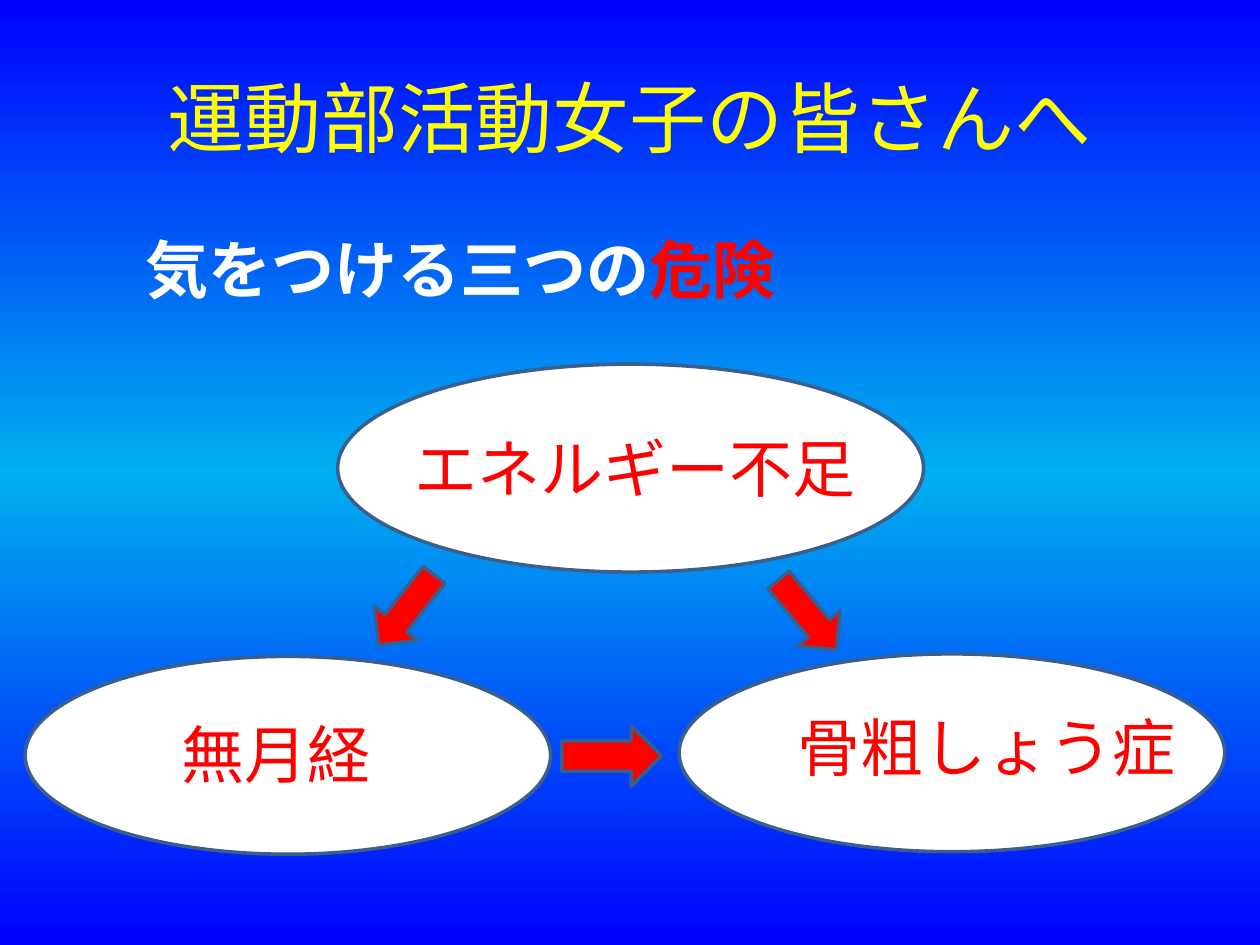
from copy import deepcopy
from dataclasses import dataclass

from pptx import Presentation
from pptx.dml.color import RGBColor
from pptx.enum.shapes import MSO_SHAPE
from pptx.enum.text import MSO_ANCHOR, MSO_AUTO_SIZE, PP_ALIGN
from pptx.oxml.ns import qn
from pptx.util import Inches, Pt

OVAL = MSO_SHAPE.OVAL
RIGHT_ARROW = MSO_SHAPE.RIGHT_ARROW
DOWN_ARROW = MSO_SHAPE.DOWN_ARROW
TITLE_ONLY = 5


@dataclass(frozen=True)
class Theme:
    blue: str = "0000FF"
    sky: str = "00B0F0"
    yellow: str = "FFFF00"
    white: str = "FFFFFF"
    red: str = "FF0000"
    outline: str = "3A5F8C"
    title_font: str = "Calibri"
    heading_font: str = "Noto Sans CJK JP"
    label_font: str = "Arial"
    title_size: int = 44
    text_size: int = 36
    outline_width: int = 2


class SlideBuilder:
    def __init__(self, slide, theme):
        self.slide = slide
        self.theme = theme

    def background(self, colors):
        """Vertical gradient with evenly spaced colours."""
        fill = self.slide.background.fill
        fill.gradient()
        fill.gradient_angle = 90
        stop_list = self.slide.element.find(".//" + qn("a:gsLst"))
        while len(stop_list) < len(colors):
            stop_list.append(deepcopy(stop_list[0]))
        for i, (stop, color) in enumerate(zip(fill.gradient_stops, colors)):
            stop.position = i / (len(colors) - 1)
            stop.color.rgb = RGBColor.from_string(color)

    def format_run(self, run, font, size, color, bold=False):
        run.font.name = font
        run.font.size = Pt(size)
        run.font.bold = bold
        run.font.color.rgb = RGBColor.from_string(color)

    def title(self, text, left, top, width, height):
        title = self.slide.shapes.title
        title.left, title.top = Inches(left), Inches(top)
        title.width, title.height = Inches(width), Inches(height)
        title.text_frame.text = text
        title.text_frame.vertical_anchor = MSO_ANCHOR.MIDDLE
        paragraph = title.text_frame.paragraphs[0]
        paragraph.alignment = PP_ALIGN.CENTER
        self.format_run(paragraph.runs[0], self.theme.title_font,
                        self.theme.title_size, self.theme.yellow)

    def text(self, parts, left, top, width, font, bold=False):
        """One line made of (wording, colour) parts."""
        box = self.slide.shapes.add_textbox(
            Inches(left), Inches(top), Inches(width), Inches(0.71))
        frame = box.text_frame
        frame.word_wrap = True
        frame.auto_size = MSO_AUTO_SIZE.SHAPE_TO_FIT_TEXT
        for wording, color in parts:
            run = frame.paragraphs[0].add_run()
            run.text = wording
            self.format_run(run, font, self.theme.text_size, color, bold)

    def shape(self, kind, left, top, width, height, color, rotation=0):
        shape = self.slide.shapes.add_shape(
            kind, Inches(left), Inches(top), Inches(width), Inches(height))
        shape.shadow.inherit = False
        shape.rotation = rotation
        shape.fill.solid()
        shape.fill.fore_color.rgb = RGBColor.from_string(color)
        shape.line.color.rgb = RGBColor.from_string(self.theme.outline)
        shape.line.width = Pt(self.theme.outline_width)


def main():
    prs = Presentation()
    prs.slide_width, prs.slide_height = Inches(10), Inches(7.5)
    theme = Theme()
    slide = prs.slides.add_slide(prs.slide_layouts[TITLE_ONLY])
    builder = SlideBuilder(slide, theme)

    # Background, title and heading
    builder.background([theme.blue, theme.sky, theme.blue])
    builder.title("運動部活動女子の皆さんへ", 0.5, 0.3, 9, 1.25)
    builder.text([("気をつける三つの", theme.white), ("危険", theme.red)],
                 1.06, 1.78, 8.35, theme.heading_font, bold=True)

    # Three dangers: ovals, then their labels
    dangers = [
        ("エネルギー不足", (2.68, 2.89, 4.65, 1.65), (3.19, 3.36, 3.78)),
        ("無月経", (0.2, 5.21, 4.17, 1.57), (1.34, 5.63, 2.99)),
        ("骨粗しょう症", (5.39, 5.19, 4.33, 1.57), (6.23, 5.57, 3.38)),
    ]
    for _, oval, _ in dangers:
        builder.shape(OVAL, *oval, theme.white)
    for danger, _, label in dangers:
        builder.text([(danger, theme.red)], *label, theme.label_font)

    # Arrows from cause to effect
    arrows = [
        (RIGHT_ARROW, (2.87, 4.62, 0.71, 0.44), 128.3),
        (DOWN_ARROW, (6.19, 4.52, 0.44, 0.72), 320.2),
        (RIGHT_ARROW, (4.46, 5.76, 0.79, 0.48), 0),
    ]
    for kind, bounds, rotation in arrows:
        builder.shape(kind, *bounds, theme.red, rotation)

    prs.save("out.pptx")


if __name__ == "__main__":
    main()
